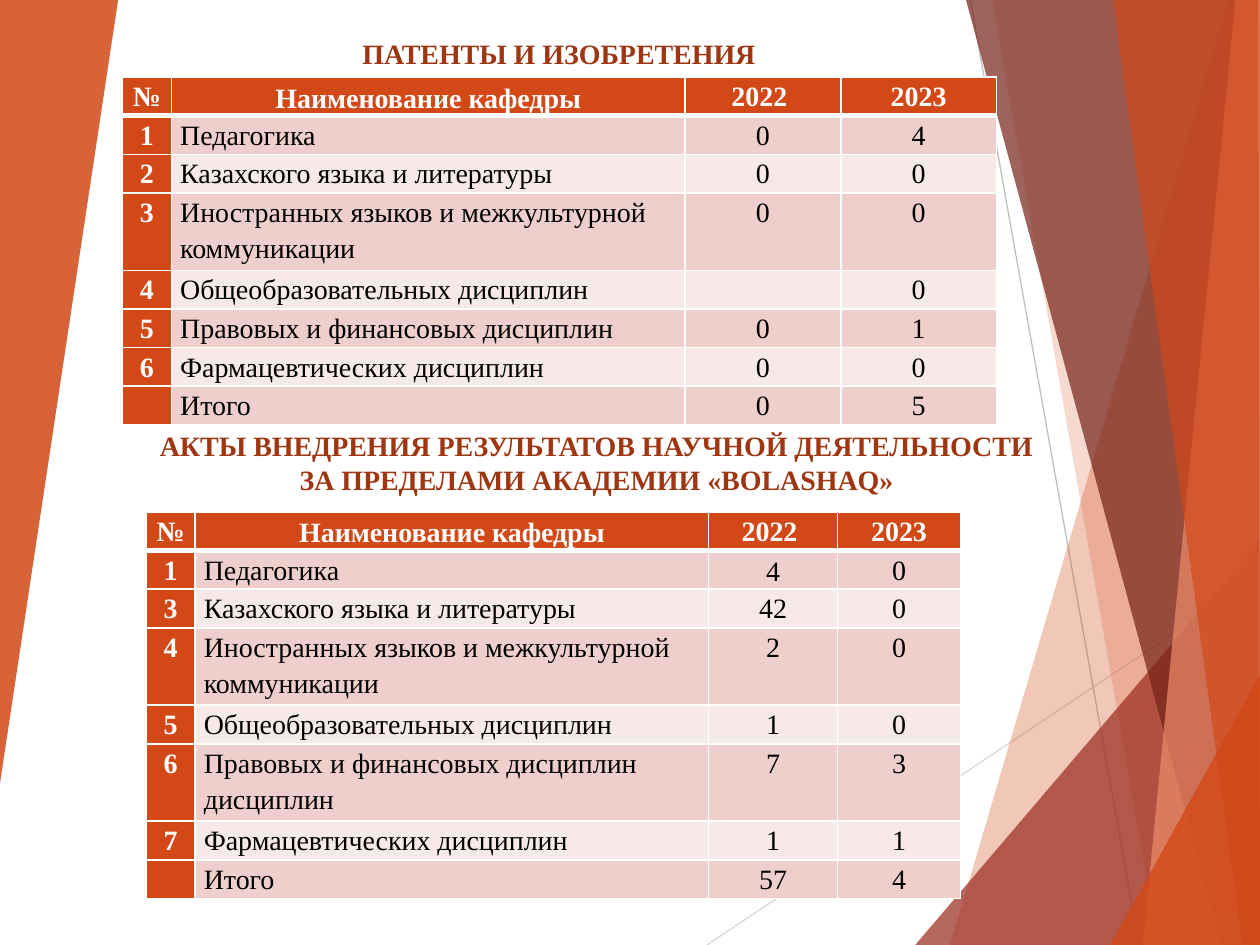
from pptx import Presentation
from pptx.dml.color import RGBColor
from pptx.enum.shapes import MSO_CONNECTOR
from pptx.enum.text import MSO_ANCHOR, PP_ALIGN
from pptx.oxml.ns import qn
from pptx.util import Pt
from lxml import etree

LINE = MSO_CONNECTOR.STRAIGHT
TOP, MIDDLE = MSO_ANCHOR.TOP, MSO_ANCHOR.MIDDLE
LEFT, CENTER = PP_ALIGN.LEFT, PP_ALIGN.CENTER
W, H = 720, 540
FONT, SIZE = "Times New Roman", 16
ROW = 22.1
BRICK, WHITE, BLACK, RUST = "D34817", "FFFFFF", "000000", "9E3611"
BANDS = ("F7E9E8", "EFCFCC")

RAYS = [
    ((404, H), (W, 329), "D9D9D9"),
    ((554.5, 0), (651, H), "BFBFBF"),
]
# Corner points, colour, opacity in percent
FACETS = [
    ([(702, 0), (543, H), (W, H), (W, 0)], BRICK, 30),
    ([(567, 0), (662, H), (W, H), (W, 0)], BRICK, 20),
    ([(523, H), (W, 309), (W, H)], "9B2D1F", 72),
    ([(552, 0), (698, H), (W, H), (W, 0)], "742217", 70),
    ([(706, 0), (653, H), (W, H), (W, 0)], "EF8C6A", 70),
    ([(636, 0), (710, H), (W, H), (719, 0)], BRICK, 65),
    ([(634.5, H), (W, 385.5), (W, H)], BRICK, 80),
    ([(0, 0), (67.5, 0), (0, 447.5)], BRICK, 85),
]

HEAD = ("№", "Наименование кафедры", "2022 ", "2023")
PATENTS = [
    HEAD,
    ("1", "Педагогика", "0", "4"),
    ("2", "Казахского языка и литературы", "0", "0"),
    ("3", "Иностранных языков и межкультурной коммуникации", "0", "0"),
    ("4", "Общеобразовательных дисциплин", "", "0"),
    ("5", "Правовых и финансовых дисциплин", "0", "1"),
    ("6", "Фармацевтических дисциплин", "0", "0"),
    ("", "Итого", "0", "5"),
]
ACTS = [
    HEAD,
    ("1", "Педагогика", "4", "0"),
    ("3", "Казахского языка и литературы", "42", "0"),
    ("4", "Иностранных языков и межкультурной коммуникации", "2", "0"),
    ("5", "Общеобразовательных дисциплин", "1", "0"),
    ("6", "Правовых и финансовых дисциплин дисциплин", "7", "3"),
    ("7", "Фармацевтических дисциплин", "1", "1"),
    ("", "Итого", "57", "4"),
]


def rgb(code):
    return RGBColor.from_string(code)


def style(par, color, bold, align):
    par.alignment = align
    font = par.font
    font.name, font.size, font.bold = FONT, Pt(SIZE), bold
    font.color.rgb = rgb(color)


def add_ray(slide, start, end, color):
    ray = slide.shapes.add_connector(LINE, *map(Pt, start + end))
    ray.line.color.rgb = rgb(color)
    ray.line.width = Pt(0.75)
    etree.SubElement(ray.element.spPr, qn("a:effectLst"))


def add_facet(slide, points, color, alpha):
    first, *rest = [(Pt(x), Pt(y)) for x, y in points]
    build = slide.shapes.build_freeform(*first)
    build.add_line_segments(rest, close=True)
    facet = build.convert_to_shape()
    facet.shadow.inherit = False
    facet.line.fill.background()
    facet.fill.solid()
    facet.fill.fore_color.rgb = rgb(color)
    tint = facet.element.find(".//" + qn("a:srgbClr"))
    etree.SubElement(tint, qn("a:alpha"), val=str(alpha * 1000))


def add_decor(slide):
    for ray in RAYS:
        add_ray(slide, *ray)
    for facet in FACETS:
        add_facet(slide, *facet)


def set_heading(shape, box, lines):
    shape.left, shape.top, shape.width, shape.height = map(Pt, box)
    frame = shape.text_frame
    frame.word_wrap = True
    frame.vertical_anchor = TOP
    frame.text = "\n".join(lines)
    for par in frame.paragraphs:
        style(par, RUST, True, CENTER)


def set_edges(cell, row):
    """White cell borders, with a heavy rule under the header row."""
    heavy = {"T": row == 1, "B": row == 0}
    props = cell._tc.get_or_add_tcPr()
    for side in "LRTB":
        width = Pt(3 if heavy.get(side) else 1)
        edge = etree.SubElement(props, qn("a:ln" + side), w=str(width))
        fill = etree.SubElement(edge, qn("a:solidFill"))
        etree.SubElement(fill, qn("a:srgbClr"), val=WHITE)


def set_cell(cell, row, col, text):
    strong = row == 0 or col == 0
    set_edges(cell, row)
    cell.fill.solid()
    cell.fill.fore_color.rgb = rgb(BRICK if strong else BANDS[row % 2])
    cell.margin_left = cell.margin_right = Pt(5)
    cell.margin_top = cell.margin_bottom = 0
    cell.vertical_anchor = MIDDLE if (row, col) == (0, 1) else TOP
    if text:
        cell.text = text
        par = cell.text_frame.paragraphs[0]
        par.line_spacing = 1.15
        align = LEFT if row and col == 1 else CENTER
        style(par, WHITE if strong else BLACK, strong, align)


def add_grid(slide, left, top, widths, data):
    """Table whose rows are doubled where the name needs two lines."""
    heights = [ROW * (2 if len(line[1]) > 35 else 1) for line in data]
    size = map(Pt, (left, top, sum(widths), sum(heights)))
    grid = slide.shapes.add_table(len(data), len(widths), *size).table
    grid.first_row = grid.horz_banding = False
    for col, width in zip(grid.columns, widths):
        col.width = Pt(width)
    for r, line in enumerate(data):
        grid.rows[r].height = Pt(heights[r])
        for c, text in enumerate(line):
            set_cell(grid.cell(r, c), r, c, text)
    return grid


def main():
    deck = Presentation()
    deck.slide_width, deck.slide_height = Pt(W), Pt(H)
    slide = deck.slides.add_slide(deck.slide_layouts[5])
    add_decor(slide)
    set_heading(slide.shapes.title, (83.5, 17.5, 472, 26.5),
                ["ПАТЕНТЫ И ИЗОБРЕТЕНИЯ"])
    note = slide.shapes.add_textbox(0, 0, 0, 0)
    set_heading(note, (10, 241.5, 662, 46),
                ["АКТЫ ВНЕДРЕНИЯ РЕЗУЛЬТАТОВ НАУЧНОЙ ДЕЯТЕЛЬНОСТИ",
                 "ЗА ПРЕДЕЛАМИ АКАДЕМИИ «BOLASHAQ»"])
    add_grid(slide, 70, 44, (28, 293.5, 89, 89), PATENTS)
    acts = add_grid(slide, 83.5, 292.5, (28, 293.5, 73.5, 70.5), ACTS)
    acts.cell(1, 2).vertical_anchor = MIDDLE
    deck.save("out.pptx")


if __name__ == "__main__":
    main()
